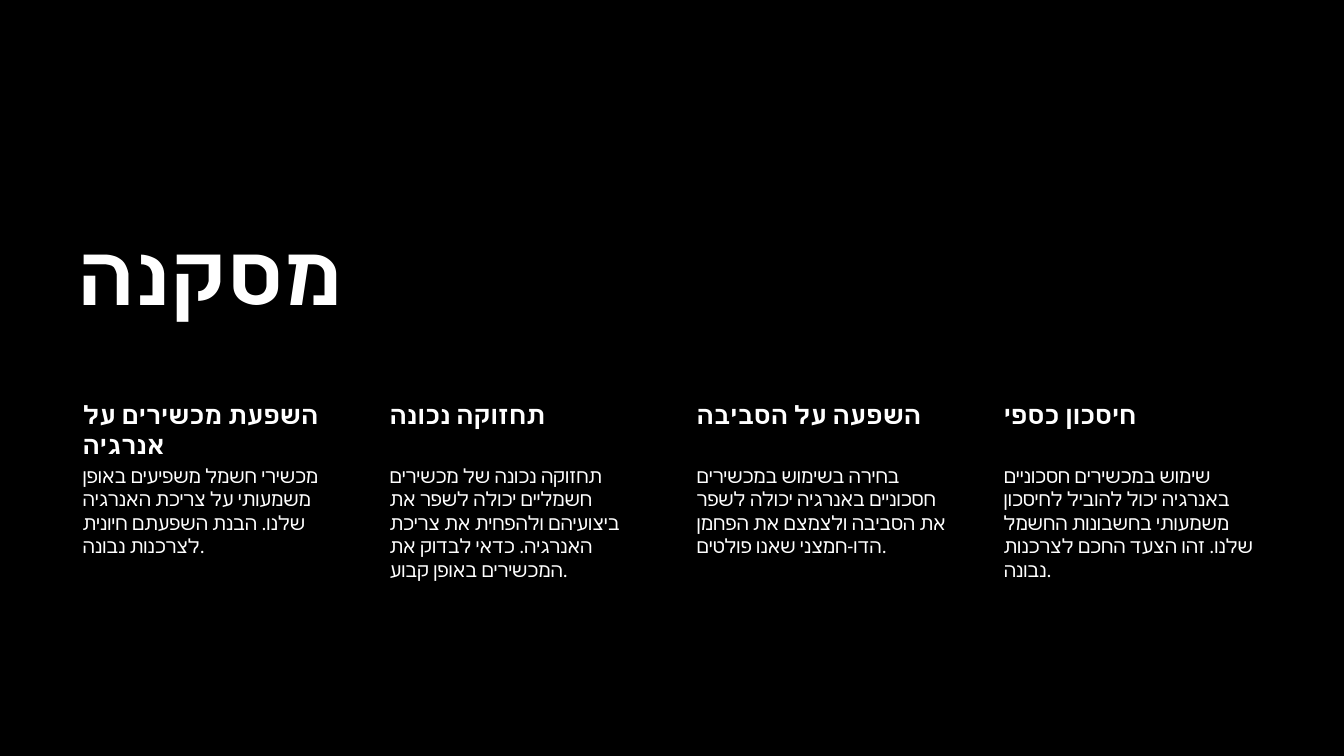
from lxml.etree import SubElement
from pptx import Presentation
from pptx.dml.color import RGBColor
from pptx.enum.text import MSO_ANCHOR
from pptx.oxml.ns import qn
from pptx.util import Inches, Pt

TITLE = "מסקנה"
COLUMNS = [
    ("השפעת מכשירים על אנרגיה",
     "מכשירי חשמל משפיעים באופן משמעותי על צריכת האנרגיה שלנו. הבנת השפעתם חיונית לצרכנות נבונה."),
    ("תחזוקה נכונה",
     "תחזוקה נכונה של מכשירים חשמליים יכולה לשפר את ביצועיהם ולהפחית את צריכת האנרגיה. "
     "כדאי לבדוק את המכשירים באופן קבוע."),
    ("השפעה על הסביבה",
     "בחירה בשימוש במכשירים חסכוניים באנרגיה יכולה לשפר את הסביבה ולצמצם את הפחמן "
     "הדו-חמצני שאנו פולטים."),
    ("חיסכון כספי",
     "שימוש במכשירים חסכוניים באנרגיה יכול להוביל לחיסכון משמעותי בחשבונות החשמל שלנו. "
     "זהו הצעד החכם לצרכנות נבונה."),
]
COLORS = {"background": "000000", "text": "FFFFFF"}
FONT = "Calibri"

LEFT = 0.67
COLUMN_WIDTH = 2.77
COLUMN_STEP = 3.045
HEADING_TOP, HEADING_HEIGHT = 3.93, 0.65
BODY_TOP, BODY_HEIGHT = HEADING_TOP + HEADING_HEIGHT, 2.09


def add_text(page, text, place, size, bold, left_inset, inset):
    """Add a wrapped text box; place is left, top, width, height in inches."""
    box = page.shapes.add_textbox(*(Inches(length) for length in place))
    frame = box.text_frame
    frame.word_wrap = True
    frame.margin_left = Inches(left_inset)
    frame.margin_top = frame.margin_right = frame.margin_bottom = Inches(inset)
    frame.text = text
    span = frame.paragraphs[0].runs[0]
    span.font.size = Pt(size)
    span.font.bold = bold
    span.font.color.rgb = RGBColor.from_string(COLORS["text"])
    span.font.name = FONT
    # Hebrew letters take the complex-script typeface
    SubElement(span.font._element, qn("a:cs"), typeface=FONT)
    return frame


def main():
    deck = Presentation()
    deck.slide_width, deck.slide_height = Inches(13.33), Inches(7.5)
    page = deck.slides.add_slide(deck.slide_layouts[6])
    page.background.fill.solid()
    page.background.fill.fore_color.rgb = RGBColor.from_string(COLORS["background"])

    title = add_text(page, TITLE, (LEFT, 2.02, 8.03, 1.24), 60, True, 0.1, 0.05)
    title.vertical_anchor = MSO_ANCHOR.BOTTOM
    title.paragraphs[0].line_spacing = 0.9

    for index, (heading, body) in enumerate(COLUMNS):
        left = LEFT + index * COLUMN_STEP
        add_text(page, heading, (left, HEADING_TOP, COLUMN_WIDTH, HEADING_HEIGHT),
                 18, True, 0.15, 0.03)
        add_text(page, body, (left, BODY_TOP, COLUMN_WIDTH, BODY_HEIGHT),
                 14, False, 0.15, 0.02)

    deck.save("out.pptx")


if __name__ == "__main__":
    main()
